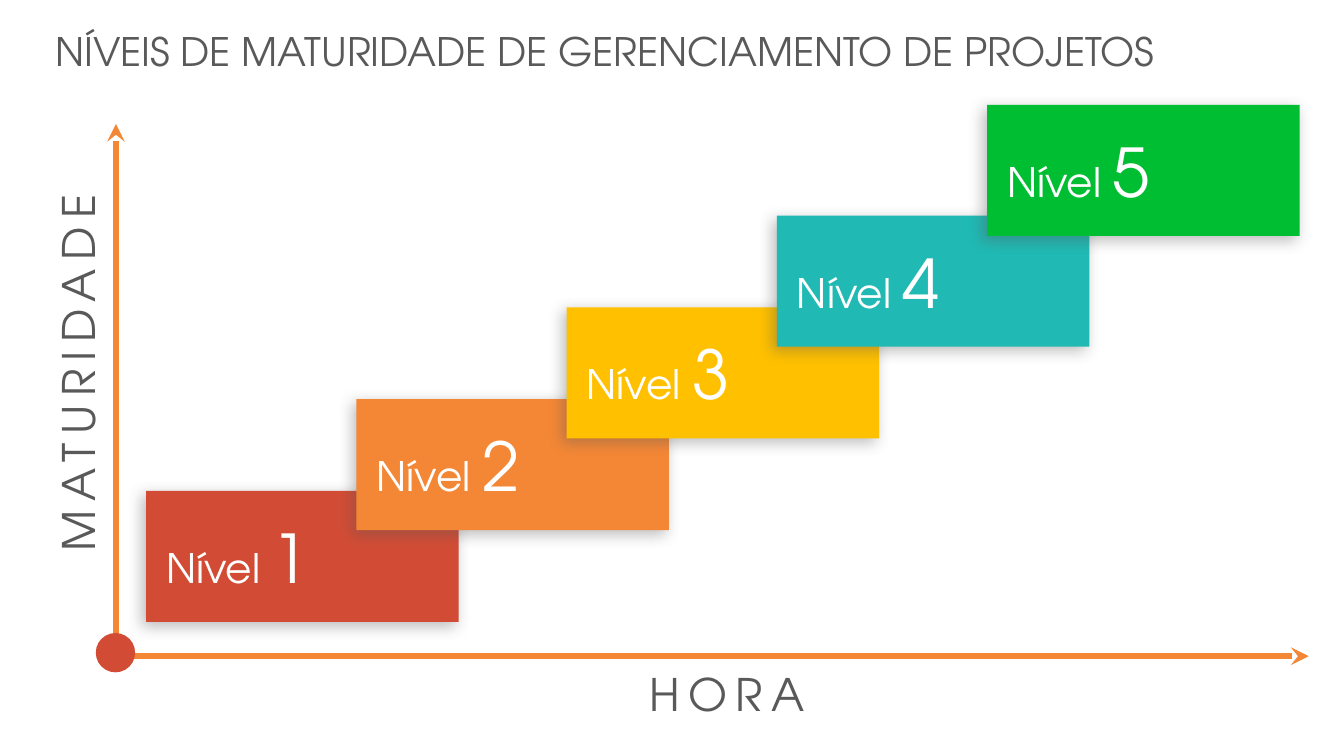
"""Build the slide of project management maturity levels."""
from lxml import etree
from pptx import Presentation
from pptx import util as u
from pptx.dml.color import RGBColor
from pptx.enum import shapes, text
from pptx.oxml import parse_xml
from pptx.oxml.ns import nsdecls, qn

FONT = "TeX Gyre Adventor"
HUES = {"gray": "595959", "white": "FFFFFF", "red": "D24C35", "orange": "F48735",
        "gold": "FFC000", "teal": "20B9B3", "green": "00BE32"}
WIDE, HIGH = 13.33, 7.5
LEVELS = [("1", "red"), ("2", "orange"), ("3", "gold"), ("4", "teal"), ("5", "green")]
LABELS = [
    ("NÍVEIS DE MATURIDADE DE GERENCIAMENTO DE PROJETOS",
     (0.45, 0.22, 12.08, 0.57), 28, 0, 0, text.PP_ALIGN.LEFT),
    ("MATURIDADE", (-2.03, 3.38, 5.6, 0.64), 32, 6, 270, text.PP_ALIGN.CENTER),
    ("HORA", (5.67, 6.57, 3.08, 0.64), 32, 6, 0, text.PP_ALIGN.CENTER),
]
LEFT, TOP, BOX = 1.45, 4.87, (3.1, 1.3)
STEP, RISE, LIFT = 2.085, 0.91, 0.19
ZERO = (1.15, 6.51)
TIPS = [(1.15, 1.23), (12.98, 6.51)]
DOT = (0.95, 6.28, 0.39, 0.39)

deck = Presentation()
deck.slide_width, deck.slide_height = u.Inches(WIDE), u.Inches(HIGH)
slide = deck.slides.add_slide(deck.slide_layouts[6])


def inch(nums):
    return [u.Inches(n) for n in nums]


def hue(name):
    return RGBColor.from_string(HUES[name])


def add_run(para, words, size, tint, gap=0):
    run = para.add_run()
    run.text = words
    run.font.name, run.font.size = FONT, u.Pt(size)
    run.font.color.rgb = hue(tint)
    if gap:
        run.font._element.set("spc", str(gap * 100))


def add_form(kind, place, tint):
    form = slide.shapes.add_shape(kind, *inch(place))
    form.fill.solid()
    form.fill.fore_color.rgb = hue(tint)
    form.line.fill.background()
    form.shadow.inherit = False
    return form


def add_shade(form):
    glow = form._element.spPr.find(qn("a:effectLst"))
    glow.append(parse_xml(
        f'<a:outerShdw {nsdecls("a")} blurRad="{u.Pt(11)}" dist="{u.Pt(4)}" '
        f'dir="{135 * 60000}" algn="tr" rotWithShape="0"><a:srgbClr val="{HUES["gray"]}">'
        '<a:alpha val="40000"/></a:srgbClr></a:outerShdw>'))


def add_level(rank, digit, tint):
    lift = LIFT if rank == len(LEVELS) - 1 else 0
    place = (LEFT + rank * STEP, TOP - rank * RISE - lift, *BOX)
    form = add_form(shapes.MSO_SHAPE.RECTANGLE, place, tint)
    add_shade(form)
    frame = form.text_frame
    frame.word_wrap = False
    frame.vertical_anchor = text.MSO_ANCHOR.MIDDLE
    frame.margin_left = u.Inches(0.2)
    frame.margin_top = frame.margin_right = frame.margin_bottom = 0
    para = frame.paragraphs[0]
    para.alignment = text.PP_ALIGN.LEFT
    add_run(para, "Nível ", 29, "white")
    add_run(para, digit, 48, "white")


def add_axis(tip):
    axis = slide.shapes.add_connector(shapes.MSO_CONNECTOR.STRAIGHT, *inch(ZERO + tip))
    axis.line.color.rgb = hue("orange")
    axis.line.width = u.Pt(4.25)
    etree.SubElement(axis.line._get_or_add_ln(), qn("a:tailEnd"), type="stealth")
    etree.SubElement(axis._element.spPr, qn("a:effectLst"))


def add_label(words, place, size, gap, turn, align):
    box = slide.shapes.add_textbox(*inch(place))
    box.rotation = turn
    frame = box.text_frame
    frame.word_wrap = True
    frame.auto_size = text.MSO_AUTO_SIZE.SHAPE_TO_FIT_TEXT
    para = frame.paragraphs[0]
    para.alignment = align
    add_run(para, words, size, "gray", gap)


add_label(*LABELS[0])
for rank, (digit, tint) in enumerate(LEVELS):
    add_level(rank, digit, tint)
for tip in TIPS:
    add_axis(tip)
add_form(shapes.MSO_SHAPE.OVAL, DOT, "red")
for label in LABELS[1:]:
    add_label(*label)

deck.save("out.pptx")
